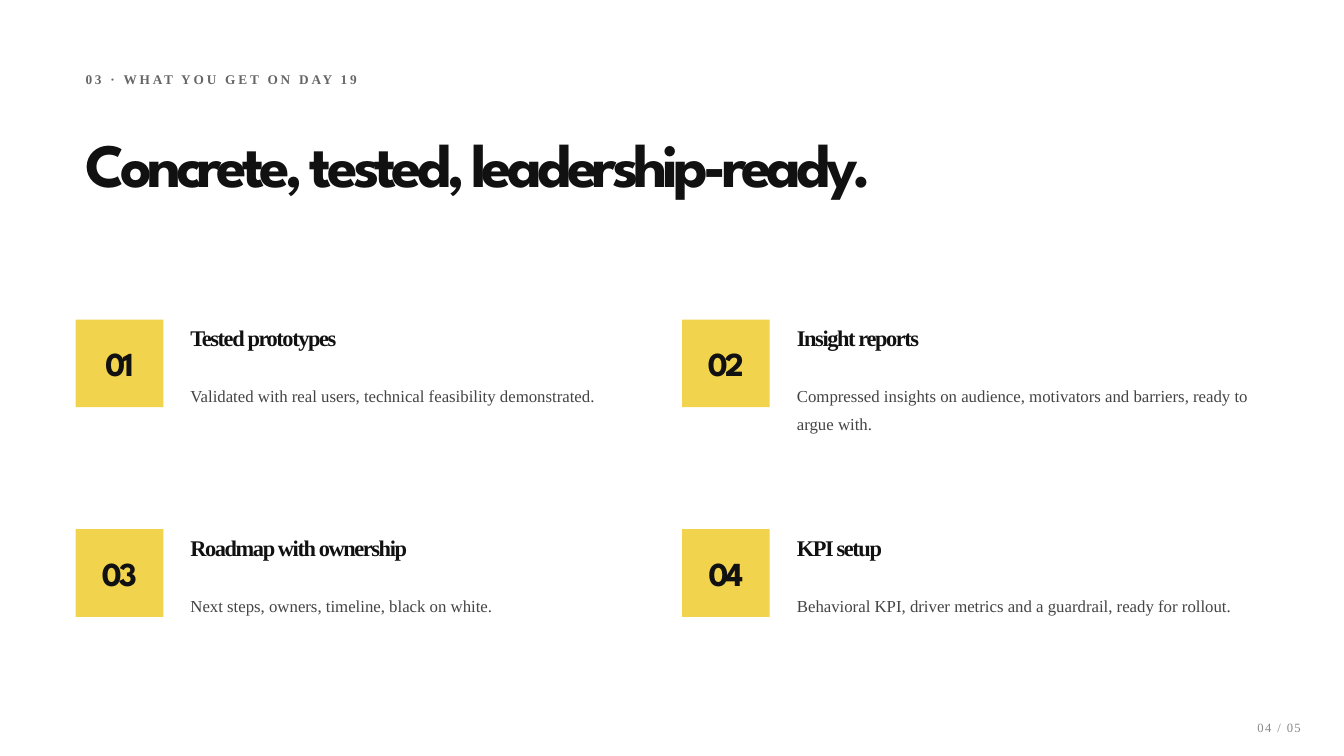
from pptx import Presentation
from pptx.dml.color import RGBColor
from pptx.enum.shapes import MSO_SHAPE
from pptx.enum.text import MSO_ANCHOR, MSO_AUTO_SIZE, PP_ALIGN
from pptx.util import Inches, Pt

KICKER = "03 · WHAT YOU GET ON DAY 19"
TITLE = "Concrete, tested, leadership-ready."
PAGE = "04 / 05"
DELIVERABLES = [
    ("Tested prototypes",
     "Validated with real users, technical feasibility demonstrated."),
    ("Insight reports",
     "Compressed insights on audience, motivators and barriers, ready to argue with."),
    ("Roadmap with ownership",
     "Next steps, owners, timeline, black on white."),
    ("KPI setup",
     "Behavioral KPI, driver metrics and a guardrail, ready for rollout."),
]

DISPLAY, BODY = "League Spartan", "Times New Roman"
INK = RGBColor(0x11, 0x11, 0x11)
DARK_GREY = RGBColor(0x44, 0x44, 0x44)
MID_GREY = RGBColor(0x66, 0x66, 0x66)
LIGHT_GREY = RGBColor(0x88, 0x88, 0x88)
YELLOW = RGBColor(0xF2, 0xD3, 0x4E)
RECTANGLE = MSO_SHAPE.RECTANGLE
TOP, MIDDLE = MSO_ANCHOR.TOP, MSO_ANCHOR.MIDDLE
LEFT, CENTER, RIGHT = PP_ALIGN.LEFT, PP_ALIGN.CENTER, PP_ALIGN.RIGHT
NO_AUTOFIT = MSO_AUTO_SIZE.NONE

WIDTH, HEIGHT = 13.33, 7.5
MARGIN = 0.75
CONTENT_WIDTH = WIDTH - 2 * MARGIN
COLUMNS = 2
GRID_TOP, ROW_PITCH = 3.17, 2.08
COLUMN_GAP = 0.2
COLUMN_WIDTH = (CONTENT_WIDTH - COLUMN_GAP) / COLUMNS
BADGE = 0.87
TEXT_OFFSET = 1.04
TEXT_WIDTH = COLUMN_WIDTH - TEXT_OFFSET
DETAIL_OFFSET = 0.53


def write(shape, text, size, color, font=BODY, bold=False, tracking=0,
          align=LEFT, anchor=TOP, line_spacing=None):
    frame = shape.text_frame
    frame.word_wrap = True
    frame.auto_size = NO_AUTOFIT
    frame.vertical_anchor = anchor
    paragraph = frame.paragraphs[0]
    run = paragraph.add_run()
    run.text = text
    if tracking:
        run._r.get_or_add_rPr().set("spc", str(int(tracking * 100)))
    paragraph.alignment = align
    if line_spacing:
        paragraph.line_spacing = line_spacing
    paragraph.font.name = font
    paragraph.font.size = Pt(size)
    paragraph.font.bold = bold
    paragraph.font.color.rgb = color


def add_text(slide, left, top, width, height, *content, **style):
    box = slide.shapes.add_textbox(*map(Inches, (left, top, width, height)))
    write(box, *content, **style)


def add_badge(slide, left, top, label):
    badge = slide.shapes.add_shape(
        RECTANGLE, *map(Inches, (left, top, BADGE, BADGE)))
    badge.shadow.inherit = False
    badge.fill.solid()
    badge.fill.fore_color.rgb = YELLOW
    badge.line.fill.background()
    badge.text_frame.margin_left = badge.text_frame.margin_right = 0
    write(badge, label, 24, INK, font=DISPLAY, bold=True, tracking=-2,
          align=CENTER, anchor=MIDDLE)


def add_deliverable(slide, index, heading, detail):
    row, column = divmod(index, COLUMNS)
    left = MARGIN + column * (COLUMN_WIDTH + COLUMN_GAP)
    top = GRID_TOP + row * ROW_PITCH
    add_badge(slide, left, top, f"{index + 1:02d}")
    add_text(slide, left + TEXT_OFFSET, top, TEXT_WIDTH, 0.49,
             heading, 16, INK, bold=True, tracking=-1)
    add_text(slide, left + TEXT_OFFSET, top + DETAIL_OFFSET, TEXT_WIDTH, 1.31,
             detail, 12, DARK_GREY, line_spacing=1.4)


def main():
    presentation = Presentation()
    presentation.slide_width = Inches(WIDTH)
    presentation.slide_height = Inches(HEIGHT)
    slide = presentation.slides.add_slide(presentation.slide_layouts[5])

    add_text(slide, MARGIN, 0.66, CONTENT_WIDTH, 0.39,
             KICKER, 9.5, MID_GREY, bold=True, tracking=2)
    title = slide.shapes.title
    title.left, title.top = Inches(MARGIN), Inches(1.2)
    title.width, title.height = Inches(CONTENT_WIDTH), Inches(1.31)
    write(title, TITLE, 44, INK, font=DISPLAY, bold=True, tracking=-3.5)

    for index, (heading, detail) in enumerate(DELIVERABLES):
        add_deliverable(slide, index, heading, detail)

    add_text(slide, 12.08, 7.09, 0.92, 0.31,
             PAGE, 9, LIGHT_GREY, tracking=1, align=RIGHT)
    presentation.save("out.pptx")


if __name__ == "__main__":
    main()
